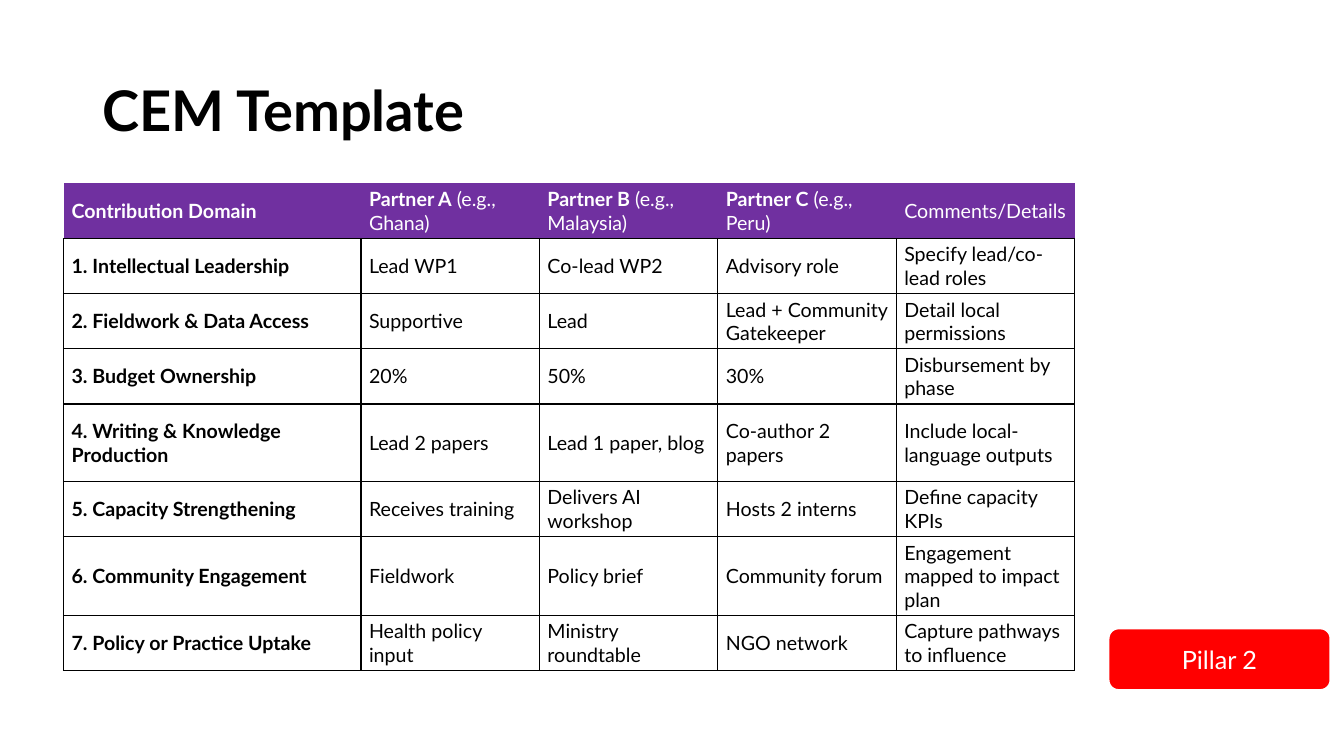
import pptx
import pptx.dml.color
import pptx.enum.shapes
import pptx.enum.text
import pptx.oxml
import pptx.oxml.ns
import pptx.util
from pptx.util import Inches

MIDDLE = pptx.enum.text.MSO_ANCHOR.MIDDLE
COL_WIDTHS = [2.95] + [1.77] * 4
ROW_HEIGHTS = [0.54, 0.54, 0.54, 0.54, 0.77, 0.54, 0.77, 0.54]
HEADERS = [
    ("Contribution Domain", ""),
    ("Partner A", " (e.g., Ghana)"),
    ("Partner B", " (e.g., Malaysia)"),
    ("Partner C", " (e.g., Peru)"),
    ("", "Comments/Details"),
]
DOMAINS = [
    ("1. Intellectual Leadership", "Lead WP1", "Co-lead WP2", "Advisory role", "Specify lead/co-lead roles"),
    ("2. Fieldwork & Data Access", "Supportive", "Lead", "Lead + Community Gatekeeper", "Detail local permissions"),
    ("3. Budget Ownership", "20%", "50%", "30%", "Disbursement by phase"),
    ("4. Writing & Knowledge Production", "Lead 2 papers", "Lead 1 paper, blog", "Co-author 2 papers",
     "Include local-language outputs"),
    ("5. Capacity Strengthening", "Receives training", "Delivers AI workshop", "Hosts 2 interns",
     "Define capacity KPIs"),
    ("6. Community Engagement", "Fieldwork", "Policy brief", "Community forum", "Engagement mapped to impact plan"),
    ("7. Policy or Practice Uptake", "Health policy input", "Ministry roundtable", "NGO network",
     "Capture pathways to influence"),
]


def rgb(value):
    """Turn a hex string into a colour."""
    return pptx.dml.color.RGBColor.from_string(value)


def add_run(p, text, size, color, bold=False):
    """Add a formatted run to a paragraph."""
    r = p.add_run()
    r.text = text
    for name, value in {"name": "Lato", "size": pptx.util.Pt(size), "bold": bold}.items():
        setattr(r.font, name, value)
    r.font.color.rgb = rgb(color)


def set_borders(cell, black_sides):
    """Draw black lines on the given sides of a cell and none on the others."""
    tc_pr = cell._tc.get_or_add_tcPr()
    for side in "LRTB":
        paint = '<a:solidFill><a:srgbClr val="000000"/></a:solidFill>' if side in black_sides else "<a:noFill/>"
        tc_pr.append(pptx.oxml.parse_xml(
            f'<a:ln{side} {pptx.oxml.ns.nsdecls("a")} w="12700">{paint}</a:ln{side}>'))


def add_title(s, box, text):
    """Place the slide title in its box."""
    tf = s.shapes.add_textbox(*map(Inches, box)).text_frame
    tf.word_wrap = True
    tf.vertical_anchor = MIDDLE
    p = tf.paragraphs[0]
    p.line_spacing = 0.9
    add_run(p, text, 40, "000000", True)


def add_contribution_table(s, box):
    """Place the contribution table in its box."""
    rows = [HEADERS] + [[(row[0], "")] + [("", text) for text in row[1:]] for row in DOMAINS]
    table = s.shapes.add_table(len(rows), len(HEADERS), *map(Inches, box)).table
    table.horz_banding = False
    for column, width in zip(table.columns, COL_WIDTHS):
        column.width = Inches(width)
    for i, (row, height) in enumerate(zip(rows, ROW_HEIGHTS)):
        table.rows[i].height = Inches(height)
        for j, parts in enumerate(row):
            cell = table.cell(i, j)
            margins = {"margin_left": 0.08, "margin_right": 0.08, "margin_top": 0.04, "margin_bottom": 0.04}
            for name, value in margins.items():
                setattr(cell, name, Inches(value))
            cell.vertical_anchor = MIDDLE
            set_borders(cell, "LRTB" if i else "B")
            if i:
                cell.fill.background()
            else:
                cell.fill.solid()
                cell.fill.fore_color.rgb = rgb("7030A0")
            for text, bold in zip(parts, (True, False)):
                if text:
                    add_run(cell.text_frame.paragraphs[0], text, 14, "000000" if i else "FFFFFF", bold)


def add_pillar_tag(s, box, text):
    """Place the rounded pillar label in its box."""
    sp = s.shapes.add_shape(pptx.enum.shapes.MSO_SHAPE.ROUNDED_RECTANGLE, *map(Inches, box))
    sp.shadow.inherit = False
    sp.fill.solid()
    sp.fill.fore_color.rgb = rgb("FF0000")
    sp.line.color.rgb = rgb("FFFFFF")
    sp.line.width = pptx.util.Pt(2)
    tf = sp.text_frame
    tf.vertical_anchor = MIDDLE
    p = tf.paragraphs[0]
    p.alignment = pptx.enum.text.PP_ALIGN.CENTER
    add_run(p, text, 18, "FFFFFF")


def main():
    """Build the slide and save it."""
    prs = pptx.Presentation()
    prs.slide_width, prs.slide_height = Inches(13.33), Inches(7.5)
    s = prs.slides.add_slide(prs.slide_layouts[6])
    add_title(s, (0.92, 0.4, 9, 1.45), "CEM Template")
    add_contribution_table(s, (0.63, 1.82, sum(COL_WIDTHS), sum(ROW_HEIGHTS)))
    add_pillar_tag(s, (10.99, 6.23, 2.21, 0.62), "Pillar 2")
    prs.save("out.pptx")


if __name__ == "__main__":
    main()
